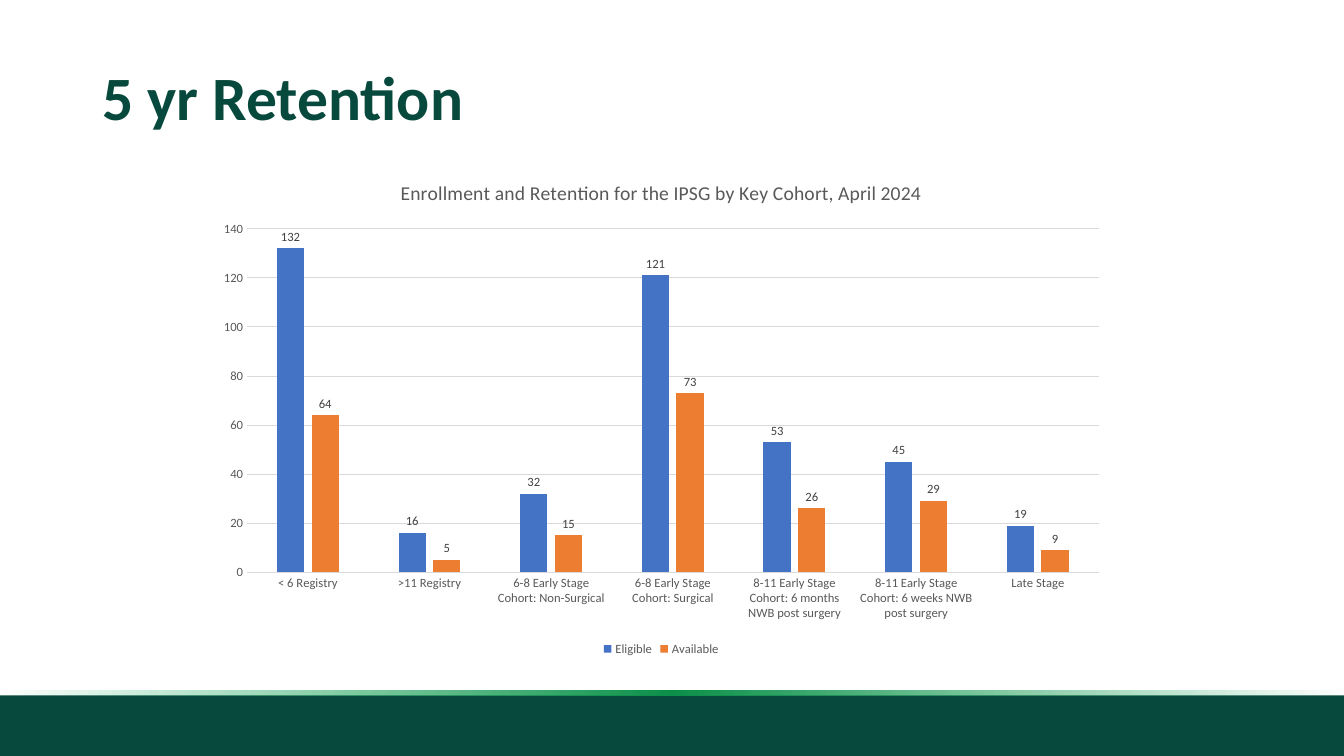
from lxml.etree import SubElement
from pptx import Presentation
from pptx.chart.data import CategoryChartData
from pptx.dml.color import RGBColor
from pptx.enum.chart import (XL_CHART_TYPE, XL_LABEL_POSITION,
                             XL_LEGEND_POSITION, XL_TICK_MARK)
from pptx.enum.shapes import MSO_SHAPE
from pptx.enum.text import MSO_ANCHOR, PP_ALIGN
from pptx.oxml.ns import qn
from pptx.util import Pt

WIDTH, HEIGHT = 960, 540
FONT = "Calibri"
GREEN, GREY, RULE = "07493C", "595959", "D9D9D9"
CATS = ["< 6 Registry", ">11 Registry",
        "6-8 Early Stage Cohort: Non-Surgical",
        "6-8 Early Stage Cohort: Surgical",
        "8-11 Early Stage Cohort: 6 months NWB post surgery",
        "8-11 Early Stage Cohort: 6 weeks NWB post surgery",
        "Late Stage"]
SERIES = [("Eligible", [132, 16, 32, 121, 53, 45, 19], "4472C4"),
          ("Available", [64, 5, 15, 73, 26, 29, 9], "ED7D31")]
GLOW = [(0, "0D9D4F", 0), (50, "0C9049", 100), (100, "0FAB56", 0)]


def paint(target, color):
    """Give a fill or a line's fill one solid colour."""
    target.solid()
    target.fore_color.rgb = RGBColor.from_string(color)


def style(font, size, color, bold=False):
    for name, value in {"name": FONT, "size": Pt(size), "bold": bold}.items():
        setattr(font, name, value)
    font.color.rgb = RGBColor.from_string(color)


def add_rect(slide, box):
    rect = slide.shapes.add_shape(MSO_SHAPE.RECTANGLE, *map(Pt, box))
    rect.shadow.inherit = False
    rect.line.fill.background()
    return rect


def fade(fill, stops):
    """Fill with a horizontal gradient of (percent, colour, opacity) stops."""
    fill.gradient()
    fill.gradient_angle = 180
    items = fill._fill._gradFill.find(qn("a:gsLst"))
    for old in list(items):
        items.remove(old)
    for place, color, alpha in stops:
        stop = SubElement(items, qn("a:gs"), pos=str(place * 1000))
        tint = SubElement(stop, qn("a:srgbClr"), val=color)
        SubElement(tint, qn("a:alpha"), val=str(alpha * 1000))


def add_footer(slide, box):
    left, top, width, height = box
    strip = 3.6
    paint(add_rect(slide, (left, top + strip, width, height - strip)).fill,
          GREEN)
    fade(add_rect(slide, (left, top, width, strip)).fill, GLOW)


def add_title(slide, box, text):
    title = slide.shapes.title
    for name, value in zip(("left", "top", "width", "height"), box):
        setattr(title, name, Pt(value))
    frame = title.text_frame
    frame.text = text
    frame.vertical_anchor = MSO_ANCHOR.MIDDLE
    line = frame.paragraphs[0]
    line.alignment = PP_ALIGN.LEFT
    line.line_spacing = 0.9
    style(line.runs[0].font, 44, GREEN, True)


def style_axes(chart):
    for axis in (chart.category_axis, chart.value_axis):
        axis.major_tick_mark = axis.minor_tick_mark = XL_TICK_MARK.NONE
        style(axis.tick_labels.font, 9, GREY)
    scale = chart.value_axis
    scale.minimum_scale, scale.maximum_scale, scale.major_unit = 0, 140, 20
    scale.format.line.fill.background()
    for line in (chart.category_axis.format.line,
                 scale.major_gridlines.format.line):
        paint(line.fill, RULE)
        line.width = Pt(0.75)


def style_bars(plot):
    plot.gap_width, plot.overlap = 219, -27
    plot.vary_by_categories = False
    for bars, (_, _, color) in zip(plot.series, SERIES):
        paint(bars.format.fill, color)
        bars.invert_if_negative = False
        labels = bars.data_labels
        labels.show_value = True
        labels.position = XL_LABEL_POSITION.OUTSIDE_END
        style(labels.font, 9, "404040")


def add_graph(slide, box, heading):
    data = CategoryChartData()
    data.categories = CATS
    for name, values, _ in SERIES:
        data.add_series(name, values)
    chart = slide.shapes.add_chart(XL_CHART_TYPE.COLUMN_CLUSTERED,
                                   *map(Pt, box), data).chart
    style(chart.font, 10, "000000")
    frame = chart.chart_title.text_frame
    frame.text = heading
    style(frame.paragraphs[0].runs[0].font, 14, GREY)
    chart.chart_title.include_in_layout = False
    chart.has_legend = True
    chart.legend.position = XL_LEGEND_POSITION.BOTTOM
    chart.legend.include_in_layout = False
    style(chart.legend.font, 9, GREY)
    style_axes(chart)
    style_bars(chart.plots[0])


def main():
    deck = Presentation()
    deck.slide_width, deck.slide_height = Pt(WIDTH), Pt(HEIGHT)
    slide = deck.slides.add_slide(deck.slide_layouts[5])
    add_footer(slide, (0, 493.2, WIDTH, HEIGHT - 493.2))
    add_title(slide, (66, 28.75, 828, 85.75), "5 yr Retention")
    add_graph(slide, (146.9, 114.5, 650.9, 357.1),
              "Enrollment and Retention for the IPSG by Key Cohort, April 2024")
    deck.save("out.pptx")


if __name__ == "__main__":
    main()
